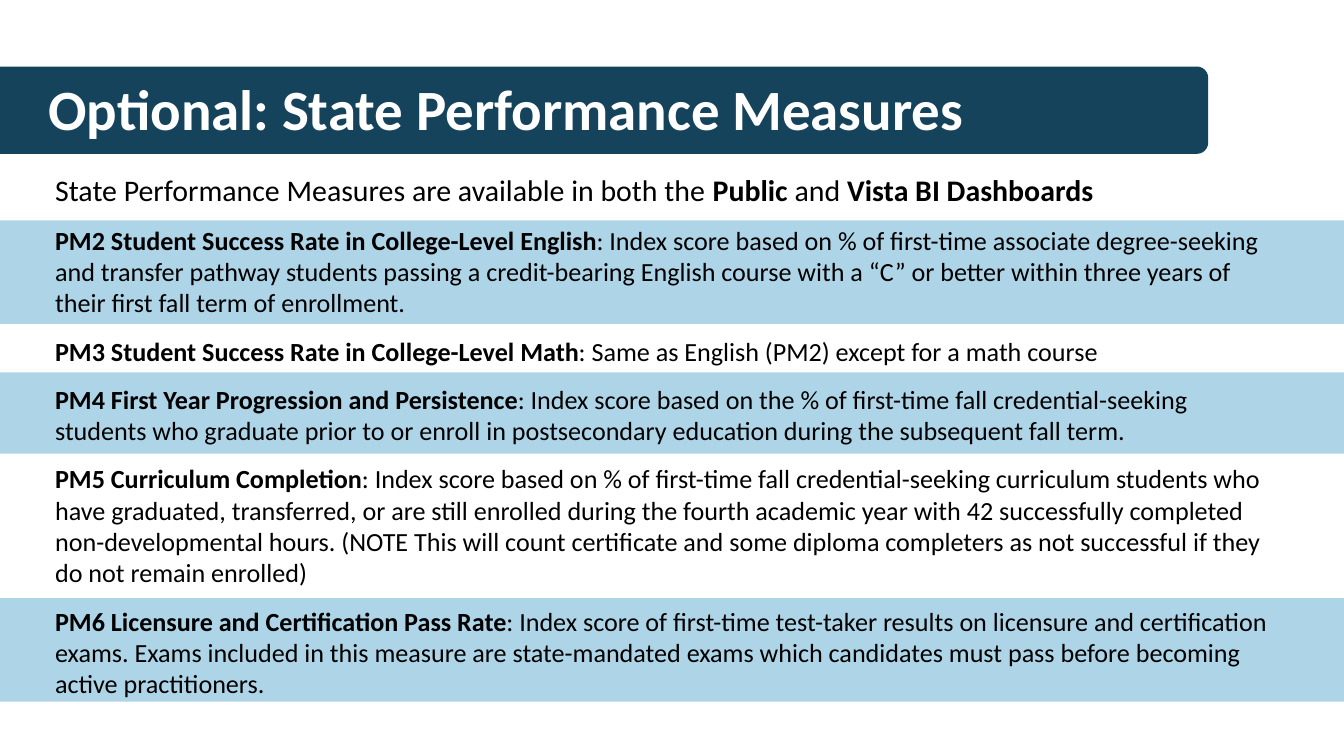
from lxml import etree
from pptx import Presentation
from pptx.dml.color import RGBColor
from pptx.enum.shapes import MSO_SHAPE
from pptx.enum.text import MSO_ANCHOR, MSO_AUTO_SIZE, PP_ALIGN
from pptx.oxml.ns import qn
from pptx.util import Inches, Pt

COLORS = {"navy": "14435B", "band": "AED5E7", "text": "000000", "white": "FFFFFF"}

# Each paragraph is a list of (text, bold) runs
INTRO = [
    ("State Performance Measures are available in both the ", False),
    ("Public", True),
    (" and ", False),
    ("Vista BI Dashboards", True),
]
RATES = [
    ("PM2 Student Success Rate in College-Level English",
     ": Index score based on % of first-time associate degree-seeking and transfer "
     "pathway students passing a credit-bearing English course with a “C” or better "
     "within three years of their first fall term of enrollment."),
    ("PM3 Student Success Rate in College-Level Math",
     ": Same as English (PM2) except for a math course"),
    ("PM4 First Year Progression and Persistence",
     ": Index score based on the % of first-time fall credential-seeking students who "
     "graduate prior to or enroll in postsecondary education during the subsequent "
     "fall term."),
    ("PM5 Curriculum Completion",
     ": Index score based on % of first-time fall credential-seeking curriculum "
     "students who have graduated, transferred, or are still enrolled during the "
     "fourth academic year with 42 successfully completed non-developmental hours. "
     "(NOTE This will count certificate and some diploma completers as not successful "
     "if they do not remain enrolled)"),
    ("PM6 Licensure and Certification Pass Rate",
     ": Index score of first-time test-taker results on licensure and certification "
     "exams. Exams included in this measure are state-mandated exams which candidates "
     "must pass before becoming active practitioners."),
]
BANDS = [(3.28, 1.54), (5.54, 1.21), (8.9, 1.54)]  # top, height


class Deck:
    font = "Calibri"

    def __init__(self, slide):
        self.slide = slide

    def box(self, kind, color, *area):
        shape = self.slide.shapes.add_shape(kind, *map(Inches, area))
        shape.shadow.inherit = False
        shape.fill.solid()
        shape.fill.fore_color.rgb = RGBColor.from_string(COLORS[color])
        shape.line.fill.background()
        return shape

    def place(self, holder, *area):
        """Move a placeholder to its area, in front of the boxes."""
        holder.left, holder.top, holder.width, holder.height = map(Inches, area)
        holder.element.getparent().append(holder.element)
        frame = holder.text_frame
        frame.word_wrap = True
        frame.auto_size = MSO_AUTO_SIZE.NONE
        frame.vertical_anchor = MSO_ANCHOR.TOP
        return frame

    def style(self, run, size, color, bold):
        font = run.font
        font.name, font.size, font.bold = self.font, Pt(size), bold
        font.color.rgb = RGBColor.from_string(COLORS[color])

    def title(self, text, *area):
        frame = self.place(self.slide.shapes.title, *area)
        frame.margin_left = frame.margin_right = 0
        frame.margin_top = frame.margin_bottom = 0
        frame.text = text
        para = frame.paragraphs[0]
        para.alignment = PP_ALIGN.LEFT
        para.line_spacing = Pt(85.4)
        self.style(para.runs[0], 61, "white", True)

    def body(self, items, *area):
        frame = self.place(self.slide.placeholders[1], *area)
        for i, (size, parts) in enumerate(items):
            para = frame.add_paragraph() if i else frame.paragraphs[0]
            para.alignment = PP_ALIGN.LEFT
            para.space_before, para.space_after = Pt(0), Pt(18)
            # No bullet, no hanging indent
            props = para._p.get_or_add_pPr()
            props.set("marL", "0")
            props.set("indent", "0")
            etree.SubElement(props, qn("a:buNone"))
            for text, bold in parts:
                run = para.add_run()
                run.text = text
                self.style(run, size, "text", bold)


def main():
    prs = Presentation()
    prs.slide_width, prs.slide_height = Inches(20), Inches(11.25)
    deck = Deck(prs.slides.add_slide(prs.slide_layouts[1]))

    # Title banner, running in from the left edge
    banner = deck.box(MSO_SHAPE.ROUNDED_RECTANGLE, "navy", -0.85, 0.99, 18.83, 1.3)
    banner.adjustments[0] = 0.13

    # Bands behind every other measure
    for top, height in BANDS:
        deck.box(MSO_SHAPE.RECTANGLE, "band", -0.17, top, 20.33, height)

    # Title and measures
    deck.title("Optional: State Performance Measures", 0.72, 0.92, 16.58, 1.12)
    rates = [(28, [(name, True), (note, False)]) for name, note in RATES]
    deck.body([(32, INTRO)] + rates, 0.72, 2.5, 18.28, 7.96)

    prs.save("out.pptx")


if __name__ == "__main__":
    main()
